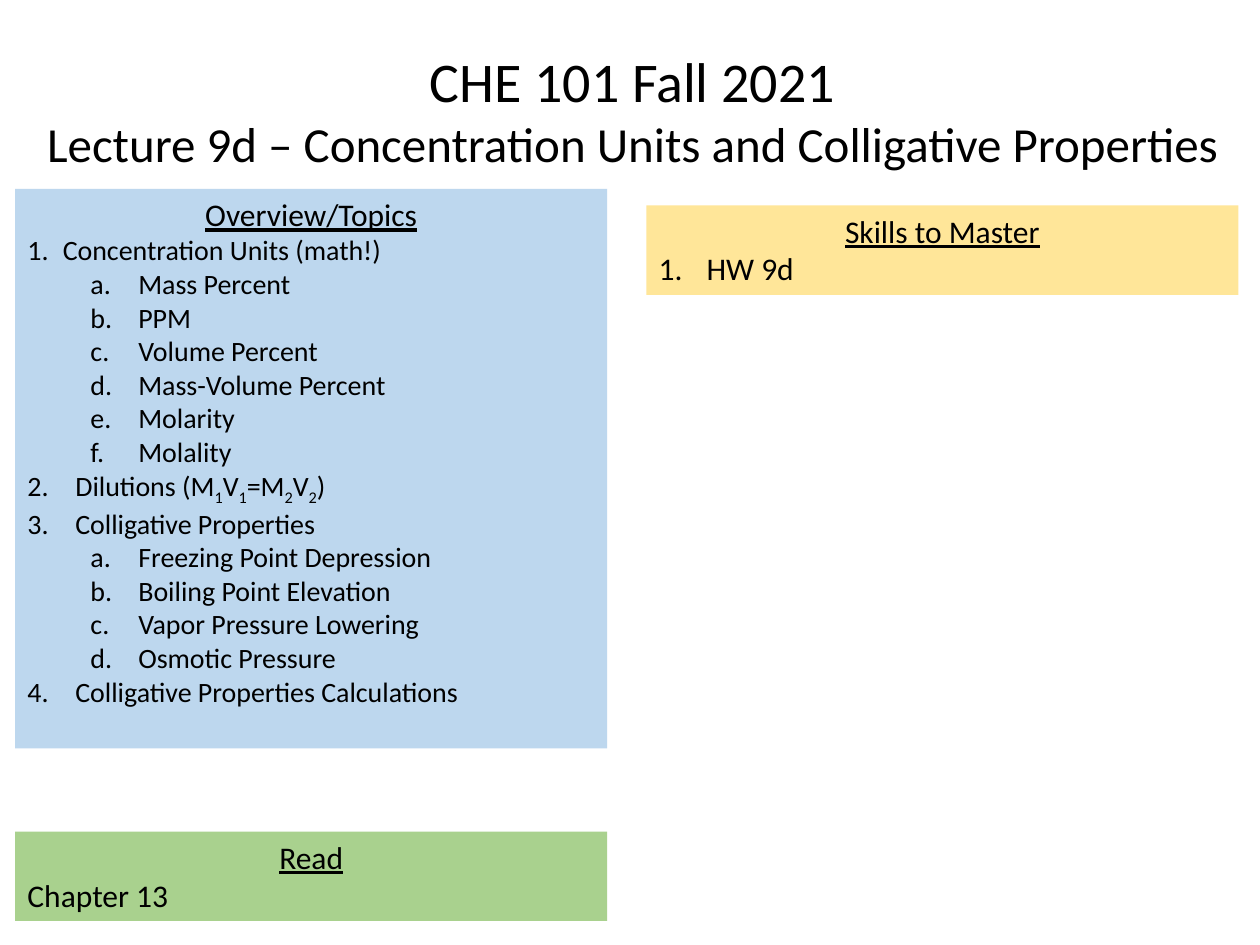
from lxml.etree import SubElement
from pptx import Presentation
from pptx.dml.color import RGBColor
from pptx.enum.shapes import MSO_SHAPE as Shape
from pptx.enum.text import MSO_ANCHOR as Anchor, PP_ALIGN as Align
from pptx.oxml.ns import qn
from pptx.util import Inches, Pt

NUMBERING = ("arabicPeriod", "alphaLcPeriod")


def paint(color_format, hex_color):
    color_format.rgb = RGBColor.from_string(hex_color)


class LectureSlide:
    font, ink = "Calibri", "000000"
    panel_width = 4.7

    def __init__(self, slide):
        self.slide = slide

    def title(self, left, top, width, height, lines):
        box = self.slide.shapes.add_textbox(*map(Inches, (left, top, width, height)))
        box.text_frame.word_wrap = False
        for index, (text, size) in enumerate(lines):
            self.line(box.text_frame, text, size, index == 0, Align.CENTER)

    def panel(self, left, top, height, color, heading):
        """Draw a filled box with an underlined heading and return its text frame."""
        box = self.slide.shapes.add_shape(
            Shape.RECTANGLE, *map(Inches, (left, top, self.panel_width, height)))
        box.shadow.inherit = False
        box.fill.solid()
        paint(box.fill.fore_color, color)
        box.line.fill.background()
        frame = box.text_frame
        frame.word_wrap = True
        frame.vertical_anchor = Anchor.TOP
        title = self.line(frame, heading, 18, True, Align.CENTER)
        title.runs[0].font.underline = True
        return frame

    def line(self, frame, text, size, first=False, align=Align.LEFT):
        """Add a paragraph; every second part between bars is a subscript."""
        paragraph = frame.paragraphs[0] if first else frame.add_paragraph()
        paragraph.alignment = align
        for index, part in enumerate(text.split("|")):
            run = paragraph.add_run()
            run.text = part
            run.font.name, run.font.size = self.font, Pt(size)
            paint(run.font.color, self.ink)
            if index % 2:
                run._r.get_or_add_rPr().set("baseline", "-25000")
        return paragraph

    def numbered(self, frame, text, size, level=0, hang=0.38):
        paragraph = self.line(frame, text, size)
        paragraph.level = level
        properties = paragraph._p.get_or_add_pPr()
        properties.set("marL", str(Inches(hang + 0.5 * level)))
        properties.set("indent", str(-Inches(hang)))
        SubElement(properties, qn("a:buFont"), typeface="+mj-lt")
        SubElement(properties, qn("a:buAutoNum"), type=NUMBERING[level])


TOPICS = [
    ("Concentration Units (math!)", 0.28,
     ["Mass Percent", "PPM", "Volume Percent", "Mass-Volume Percent",
      "Molarity", "Molality"]),
    ("Dilutions (M|1|V|1|=M|2|V|2|)", 0.38, []),
    ("Colligative Properties", 0.38,
     ["Freezing Point Depression", "Boiling Point Elevation",
      "Vapor Pressure Lowering", "Osmotic Pressure"]),
    ("Colligative Properties Calculations", 0.38, []),
]


def main():
    deck = Presentation()
    deck.slide_width, deck.slide_height = Inches(10), Inches(7.5)
    lecture = LectureSlide(deck.slides.add_slide(deck.slide_layouts[6]))

    overview = lecture.panel(0.12, 1.5, 4.44, "BDD7EE", "Overview/Topics")
    for topic, hang, subtopics in TOPICS:
        lecture.numbered(overview, topic, 16, hang=hang)
        for subtopic in subtopics:
            lecture.numbered(overview, subtopic, 16, level=1)

    skills = lecture.panel(5.13, 1.63, 0.71, "FFE699", "Skills to Master")
    lecture.numbered(skills, "HW 9d", 18)

    reading = lecture.panel(0.12, 6.6, 0.71, "A9D18E", "Read")
    lecture.line(reading, "Chapter 13", 18)

    lecture.title(0.22, 0.32, 9.6, 1.11, [
        ("CHE 101 Fall 2021", 32),
        ("Lecture 9d – Concentration Units and Colligative Properties", 28),
    ])
    deck.save("out.pptx")


if __name__ == "__main__":
    main()
